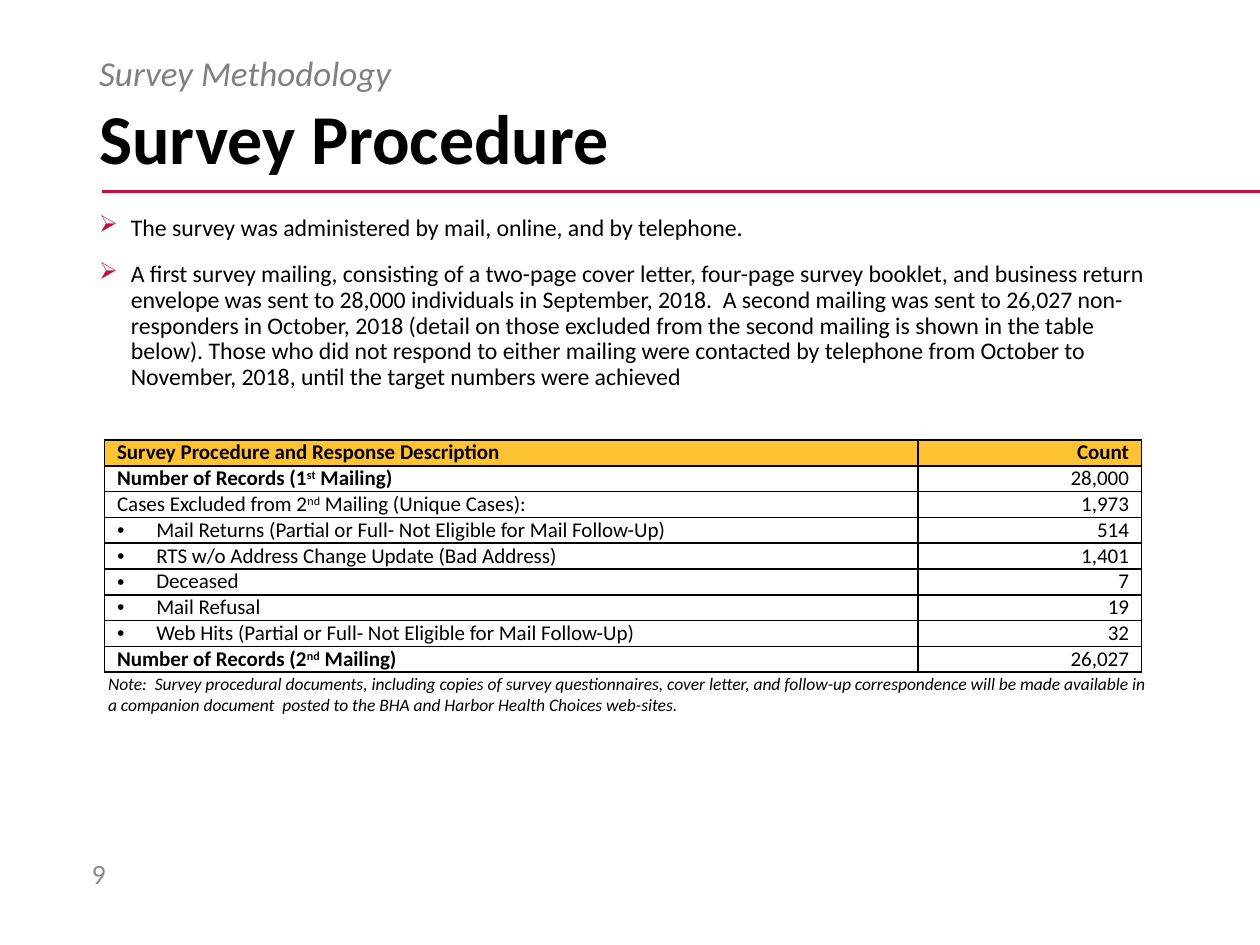
from dataclasses import dataclass

from lxml import etree
from pptx import Presentation
from pptx import util as u
from pptx.dml.color import RGBColor
from pptx.enum import shapes, text
from pptx.oxml import ns

FONT = "Calibri"
COLORS = {
    "ink": "000000",
    "rule": "C40E3E",
    "kicker": "808080",
    "number": "8C8C8C",
    "header": "FFC233",
}
INSET = 0.25
TEXT_LEFT, TEXT_WIDTH = 1.75, 21.9


@dataclass(frozen=True)
class Bullet:
    character: str
    font: str
    color: str
    hang: float


@dataclass(frozen=True)
class TextBlock:
    left: float
    top: float
    width: float
    height: float
    paragraphs: tuple[str, ...]
    style: dict
    anchor: text.MSO_ANCHOR = text.MSO_ANCHOR.TOP


@dataclass(frozen=True)
class CountRow:
    label: str
    count: str
    bold: bool = False
    bullet: Bullet | None = None


ARROW = Bullet("Ø", "Wingdings", "rule", 0.64)
DOT = Bullet("•", "Arial", "ink", 0.79)

BLOCKS = [
    TextBlock(TEXT_LEFT, 1.0, TEXT_WIDTH, 1.24, ("Survey Methodology",),
              dict(size=20, color="kicker", italic=True, spacing=0.9)),
    TextBlock(TEXT_LEFT, 4.22, TEXT_WIDTH, 4.19, (
        "The survey was administered by mail, online, and by telephone.",
        "A first survey mailing, consisting of a two-page cover letter, four-page survey "
        "booklet, and business return envelope was sent to 28,000 individuals in September, "
        "2018.  A second mailing was sent to 26,027 non-responders in October, 2018 (detail "
        "on those excluded from the second mailing is shown in the table below). Those who "
        "did not respond to either mailing were contacted by telephone from October to "
        "November, 2018, until the target numbers were achieved",
    ), dict(size=13.6, spacing=0.9, bullet=ARROW)),
    TextBlock(1.93, 13.44, 21.54, 1.27, (
        "Note:  Survey procedural documents, including copies of survey questionnaires, "
        "cover letter, and follow-up correspondence will be made available in a companion "
        "document  posted to the BHA and Harbor Health Choices web-sites.",
    ), dict(size=10, italic=True)),
    TextBlock(1.6, 17.09, 1.4, 1.02, ("9",), dict(size=16, color="number"),
              text.MSO_ANCHOR.MIDDLE),
]

ROWS = [
    CountRow("Survey Procedure and Response Description", "Count", bold=True),
    CountRow("Number of Records (1^st^ Mailing)", "28,000", bold=True),
    CountRow("Cases Excluded from 2^nd^ Mailing (Unique Cases):", "1,973"),
    CountRow("Mail Returns (Partial or Full- Not Eligible for Mail Follow-Up)", "514", bullet=DOT),
    CountRow("RTS w/o Address Change Update (Bad Address)", "1,401", bullet=DOT),
    CountRow("Deceased", "7", bullet=DOT),
    CountRow("Mail Refusal", "19", bullet=DOT),
    CountRow("Web Hits (Partial or Full- Not Eligible for Mail Follow-Up)", "32", bullet=DOT),
    CountRow("Number of Records (2^nd^ Mailing)", "26,027", bold=True),
]


def rgb(name: str) -> RGBColor:
    return RGBColor.from_string(COLORS[name])


def add_bullet(para, bullet: Bullet) -> None:
    properties = para._p.get_or_add_pPr()
    properties.set("marL", str(u.Cm(bullet.hang)))
    properties.set("indent", str(-u.Cm(bullet.hang)))
    holder = etree.SubElement(properties, ns.qn("a:buClr"))
    etree.SubElement(holder, ns.qn("a:srgbClr"), val=COLORS[bullet.color])
    etree.SubElement(properties, ns.qn("a:buFont"), typeface=bullet.font)
    etree.SubElement(properties, ns.qn("a:buChar"), char=bullet.character)


def write(para, content: str, *, size: float, color: str = "ink", bold: bool = False,
          italic: bool = False, align=text.PP_ALIGN.LEFT, spacing: float = 1.0,
          before: float = 0, bullet: Bullet | None = None) -> None:
    para.alignment = align
    para.line_spacing = spacing
    para.space_before = u.Pt(before)
    if bullet:
        add_bullet(para, bullet)
    for index, part in enumerate(content.split("^")):
        span = para.add_run()
        span.text = part
        span.font.name = FONT
        span.font.size = u.Pt(size)
        span.font.bold = bold
        span.font.italic = italic
        span.font.color.rgb = rgb(color)
        if index % 2:
            span._r.get_or_add_rPr().set("baseline", "30000")


def add_block(slide, block: TextBlock) -> None:
    box = slide.shapes.add_textbox(u.Cm(block.left), u.Cm(block.top),
                                   u.Cm(block.width), u.Cm(block.height))
    frame = box.text_frame
    frame.word_wrap = True
    frame.vertical_anchor = block.anchor
    for index, content in enumerate(block.paragraphs):
        para = frame.add_paragraph() if index else frame.paragraphs[0]
        write(para, content, before=12 if index else 0, **block.style)


def add_title(slide, content: str) -> None:
    title = slide.shapes.title
    title.left, title.top = u.Cm(TEXT_LEFT), u.Cm(1.02)
    title.width, title.height = u.Cm(TEXT_WIDTH), u.Cm(3.68)
    title.text_frame.auto_size = text.MSO_AUTO_SIZE.NONE
    title.text_frame.vertical_anchor = text.MSO_ANCHOR.MIDDLE
    write(title.text_frame.paragraphs[0], content, size=40, bold=True, spacing=0.9)


def add_rule(slide) -> None:
    rule = slide.shapes.add_connector(shapes.MSO_CONNECTOR.STRAIGHT, u.Cm(2.06), u.Cm(3.86),
                                      u.Cm(25.4), u.Cm(3.86))
    rule.line.color.rgb = rgb("rule")
    rule.line.width = u.Pt(2.25)
    etree.SubElement(rule._element.spPr, ns.qn("a:effectLst"))


def add_borders(cell) -> None:
    properties = cell._tc.get_or_add_tcPr()
    for index, side in enumerate(("lnL", "lnR", "lnT", "lnB")):
        border = etree.Element(ns.qn(f"a:{side}"), w=str(u.Pt(1)))
        fill = etree.SubElement(border, ns.qn("a:solidFill"))
        etree.SubElement(fill, ns.qn("a:srgbClr"), val=COLORS["ink"])
        properties.insert(index, border)


def fill_cell(cell, content: str, is_header: bool, **style) -> None:
    cell.margin_left = cell.margin_right = u.Cm(INSET)
    cell.margin_top = cell.margin_bottom = 0
    if is_header:
        cell.fill.solid()
        cell.fill.fore_color.rgb = rgb("header")
    else:
        cell.fill.background()
    add_borders(cell)
    write(cell.text_frame.paragraphs[0], content, size=12, **style)


def add_count_table(slide, rows: list[CountRow]) -> None:
    widths, row_height = (16.4, 4.5), 0.52
    table = slide.shapes.add_table(len(rows), len(widths), u.Cm(2.11), u.Cm(8.87),
                                   u.Cm(sum(widths)), u.Cm(row_height * len(rows))).table
    table.horz_banding = False
    for column, width in zip(table.columns, widths):
        column.width = u.Cm(width)
    for index, row in enumerate(rows):
        table.rows[index].height = u.Cm(row_height)
        is_header = index == 0
        fill_cell(table.cell(index, 0), row.label, is_header, bold=row.bold, bullet=row.bullet)
        fill_cell(table.cell(index, 1), row.count, is_header, bold=is_header,
                  align=text.PP_ALIGN.RIGHT)


def main() -> None:
    deck = Presentation()
    deck.slide_width, deck.slide_height = u.Cm(25.4), u.Cm(19.05)
    page = deck.slides.add_slide(deck.slide_layouts[5])
    add_rule(page)
    add_title(page, "Survey Procedure")
    for block in BLOCKS:
        add_block(page, block)
    add_count_table(page, ROWS)
    deck.save("out.pptx")


if __name__ == "__main__":
    main()
